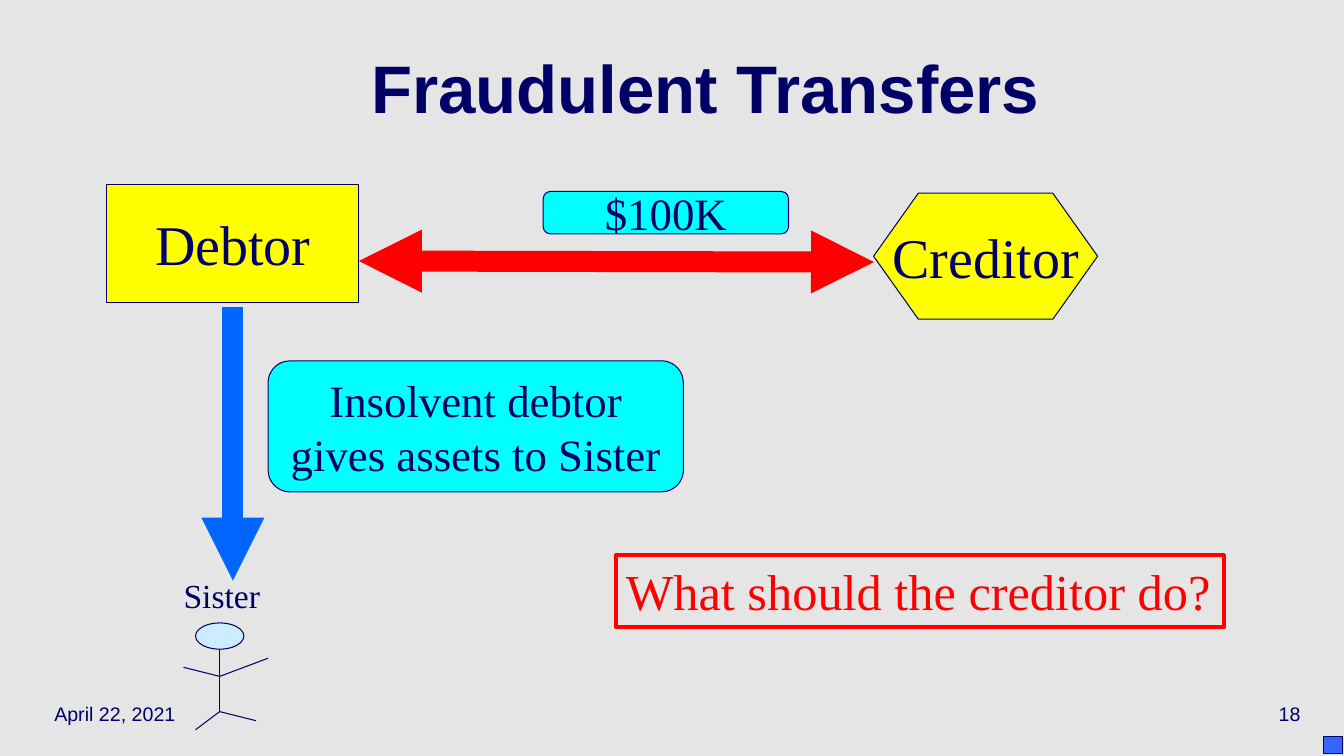
from dataclasses import dataclass

import pptx
import pptx.dml.color
import pptx.enum.shapes
import pptx.enum.text
import pptx.oxml
import pptx.oxml.ns
import pptx.util

Shape = pptx.enum.shapes.MSO_SHAPE
Align = pptx.enum.text.PP_ALIGN
Anchor = pptx.enum.text.MSO_ANCHOR


@dataclass(frozen=True)
class Theme:
    sans: str = "Arial"
    serif: str = "Times New Roman"
    paper: str = "E5E5E5"
    ink: str = "000066"
    party: str = "FFFF00"
    note: str = "00FFFF"
    alert: str = "FF0000"
    gift: str = "0066FF"
    face: str = "CCECFF"
    corner: str = "3366FF"
    title_size: int = 48
    party_size: int = 40
    question_size: int = 36
    note_size: int = 32
    sister_size: int = 24
    footer_size: int = 14
    thin: float = 0.75
    frame: float = 3
    arrow: float = 15


theme = Theme()

# Places are percentages of the slide: left, top, width, height.
LABELS = [
    ("April 22, 2021", (3.3, 91.07, 20.85, 6.67), theme.sans, theme.footer_size, Align.LEFT, Anchor.MIDDLE),
    ("18", (76.65, 91.07, 20.85, 6.67), theme.sans, theme.footer_size, Align.RIGHT, Anchor.MIDDLE),
    ("Sister", (10.58, 75.33, 11.85, 6.67), theme.serif, theme.sister_size, Align.CENTER, Anchor.TOP),
]
TITLE = ("Fraudulent Transfers", (6.67, 4.4, 91.67, 16.67), theme.sans, theme.title_size, Align.CENTER, Anchor.MIDDLE)
BOXES = [
    ("Creditor", Shape.FLOWCHART_PREPARATION, (65, 25.56, 16.67, 16.67), theme.party, theme.party_size, False),
    ("Debtor", Shape.FLOWCHART_PROCESS, (7.95, 24.44, 18.75, 15.56), theme.party, theme.party_size, False),
    ("$100K", Shape.FLOWCHART_ALTERNATE_PROCESS, (40.42, 25.33, 18.25, 5.6), theme.note, theme.note_size, False),
    ("Insolvent debtor gives assets to Sister", Shape.FLOWCHART_ALTERNATE_PROCESS,
     (19.95, 47.73, 30.9, 17.33), theme.note, theme.note_size, True),
]
QUESTION = ("What should the creditor do?", (45.83, 73.47, 45.23, 9.47))
CORNER = (98.5, 97.47, 1.43, 2.27)
HEAD = (14.55, 82.4, 3.6, 3.47)
NECK, SHOULDER, HIP = (16.35, 85.87), (16.35, 89.47), (16.35, 94.13)
LIMBS = [
    (NECK, HIP),
    (SHOULDER, (19.95, 87.07)),
    (SHOULDER, (13.65, 88.27)),
    (HIP, (19.05, 95.33)),
    (HIP, (14.55, 96.53)),
]
ARROWS = [
    ((26.7, 34.53), (65.03, 34.67), theme.alert, ("headEnd", "tailEnd")),
    ((17.33, 40.67), (17.33, 76.8), theme.gift, ("tailEnd",)),
]

deck = pptx.Presentation()
deck.slide_width = pptx.util.Inches(13.33)
deck.slide_height = pptx.util.Inches(7.5)
page = deck.slides.add_slide(deck.slide_layouts[6])


def color(code):
    return pptx.dml.color.RGBColor.from_string(code)


def place(shares):
    sides = (deck.slide_width, deck.slide_height) * (len(shares) // 2)
    return [round(side * share / 100) for side, share in zip(sides, shares)]


def write(box, text, font, size, ink, align, anchor, wrap=True):
    frame = box.text_frame
    frame.word_wrap = wrap
    frame.vertical_anchor = anchor
    para = frame.paragraphs[0]
    para.text = text
    para.alignment = align
    para.font.name = font
    para.font.size = pptx.util.Pt(size)
    para.font.color.rgb = color(ink)
    return para


def add_label(text, shares, font, size, align, anchor):
    box = page.shapes.add_textbox(*place(shares))
    return write(box, text, font, size, theme.ink, align, anchor)


def add_box(shapes, kind, shares, fill, line=theme.ink, width=theme.thin):
    box = shapes.add_shape(kind, *place(shares))
    box.shadow.inherit = False
    if fill:
        box.fill.solid()
        box.fill.fore_color.rgb = color(fill)
    else:
        box.fill.background()
    box.line.color.rgb = color(line)
    box.line.width = pptx.util.Pt(width)
    return box


def add_line(shapes, start, end, ink=theme.ink, width=theme.thin, arrowheads=()):
    line = shapes.add_connector(pptx.enum.shapes.MSO_CONNECTOR.STRAIGHT, *place(start + end))
    line.line.color.rgb = color(ink)
    line.line.width = pptx.util.Pt(width)
    properties = line._element.spPr
    pptx.oxml.ns.qn("a:effectLst")
    outline = line.line._get_or_add_ln()
    for arrowhead in arrowheads:
        tag = pptx.oxml.ns.qn("a:" + arrowhead)
        outline.append(outline.makeelement(tag, {"type": "triangle"}))
    properties.append(properties.makeelement(pptx.oxml.ns.qn("a:effectLst"), {}))


page.background.fill.solid()
page.background.fill.fore_color.rgb = color(theme.paper)

title = add_label(*TITLE)
title.font.bold = True
title.line_spacing = 0.7

for label in LABELS:
    add_label(*label)

for text, kind, shares, fill, size, wrap in BOXES:
    box = add_box(page.shapes, kind, shares, fill)
    write(box, text, theme.serif, size, theme.ink, Align.CENTER, Anchor.MIDDLE, wrap)

sister = page.shapes.add_group_shape()
for start, end in LIMBS:
    add_line(sister.shapes, start, end)
add_box(sister.shapes, Shape.OVAL, HEAD, theme.face)

for start, end, ink, arrowheads in ARROWS:
    add_line(page.shapes, start, end, ink, theme.arrow, arrowheads)

question, question_place = QUESTION
box = add_box(page.shapes, Shape.RECTANGLE, question_place, None, theme.alert, theme.frame)
write(box, question, theme.serif, theme.question_size, theme.alert, Align.LEFT, Anchor.TOP)

add_box(page.shapes, Shape.RECTANGLE, CORNER, theme.corner)

deck.save("out.pptx")
